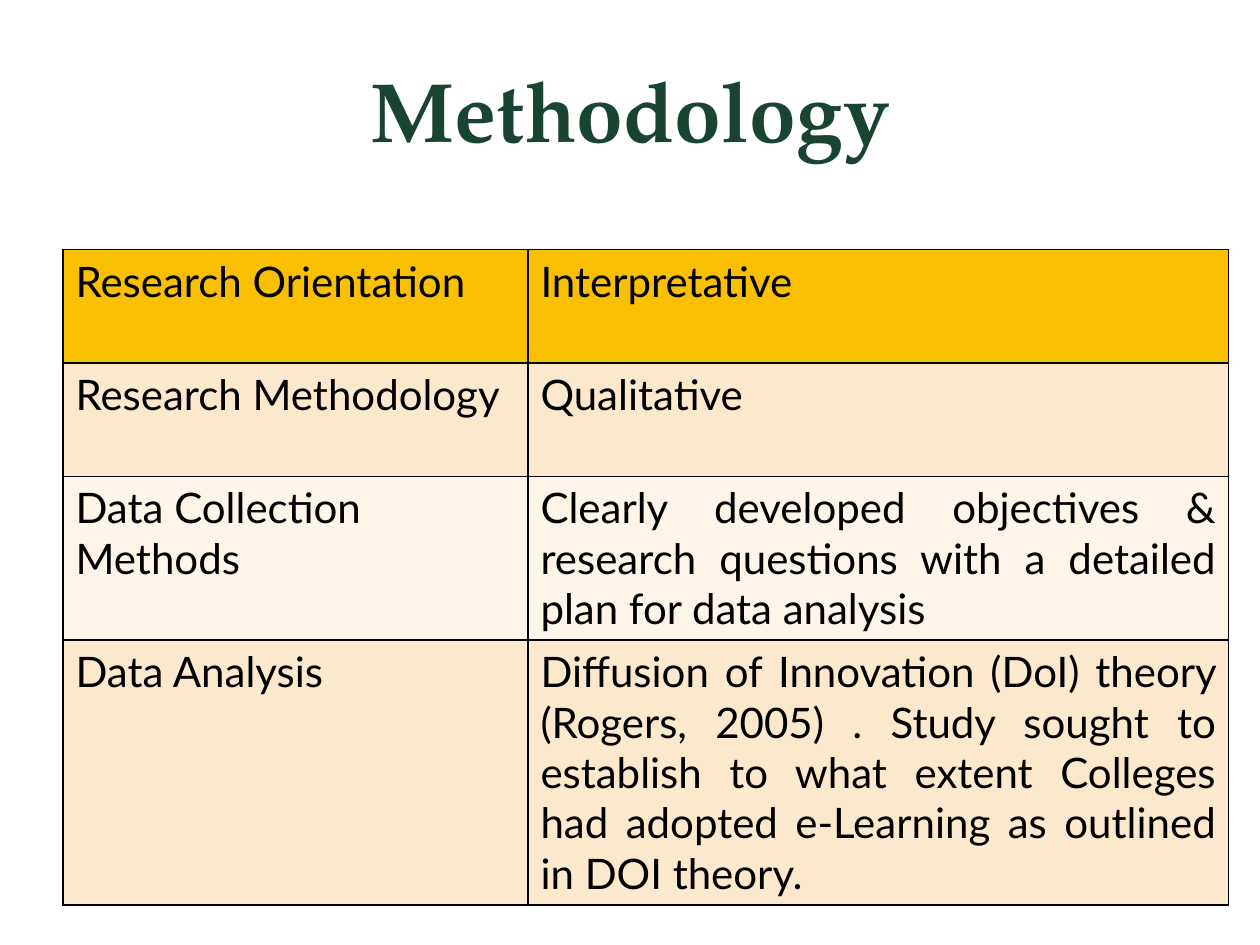
from lxml import etree
from pptx import Presentation
from pptx.dml.color import RGBColor
from pptx.enum.text import MSO_ANCHOR, PP_ALIGN
from pptx.oxml.ns import qn
from pptx.util import Inches, Pt

LEFT, CENTER, JUSTIFY = PP_ALIGN.LEFT, PP_ALIGN.CENTER, PP_ALIGN.JUSTIFY
MIDDLE = MSO_ANCHOR.MIDDLE
COLORS = {
    "title": "194431",
    "text": "000000",
    "border": "000000",
    "header": "F8C000",
    "band": "FCE8CC",
    "plain": "FEF4E7",
}
TITLE_FONT = {"name": "TeX Gyre Pagella", "size": Pt(48), "bold": True}
CELL_FONT = {"name": "Lato", "size": Pt(24), "bold": False}
COLUMN_WIDTHS = [3.69, 5.56]
METHOD_ROWS = [
    (0.9, "header", LEFT, "Research Orientation", "Interpretative"),
    (0.9, "band", JUSTIFY, "Research Methodology", "Qualitative"),
    (1.3, "plain", LEFT, "Data Collection Methods",
     "Clearly developed objectives & research questions with a detailed plan "
     "for data analysis"),
    (2.1, "band", LEFT, "Data Analysis",
     "Diffusion of Innovation (DoI) theory (Rogers, 2005) . Study sought to "
     "establish to what extent Colleges had adopted e-Learning as outlined in "
     "DOI theory."),
]


def write_text(frame, text, align, font, color):
    """Write one formatted paragraph into a text frame."""
    para = frame.paragraphs[0]
    para.alignment = align
    span = para.add_run()
    span.text = text
    for name, value in font.items():
        setattr(span.font, name, value)
    span.font.color.rgb = RGBColor.from_string(COLORS[color])


def add_borders(cell):
    """Draw a one-point line on each side of a cell."""
    properties = cell._tc.get_or_add_tcPr()
    for index, side in enumerate(("a:lnL", "a:lnR", "a:lnT", "a:lnB")):
        line = etree.Element(qn(side), w=str(Pt(1)))
        fill = etree.SubElement(line, qn("a:solidFill"))
        etree.SubElement(fill, qn("a:srgbClr"), val=COLORS["border"])
        properties.insert(index, line)


def fill_cell(cell, text, align, color):
    """Give a cell its fill, text and borders."""
    cell.fill.solid()
    cell.fill.fore_color.rgb = RGBColor.from_string(COLORS[color])
    write_text(cell.text_frame, text, align, CELL_FONT, "text")
    add_borders(cell)


def place_title(page, text, left, top, width, height):
    """Move the title placeholder into its box and format it."""
    title = page.shapes.title
    box = {"left": left, "top": top, "width": width, "height": height}
    for name, value in box.items():
        setattr(title, name, Inches(value))
    title.text_frame.vertical_anchor = MIDDLE
    write_text(title.text_frame, text, CENTER, TITLE_FONT, "title")


def add_method_table(page, left, top):
    """Add the methodology table with its top left corner at the given point."""
    width = sum(COLUMN_WIDTHS)
    height = sum(row[0] for row in METHOD_ROWS)
    table = page.shapes.add_table(
        len(METHOD_ROWS), len(COLUMN_WIDTHS),
        Inches(left), Inches(top), Inches(width), Inches(height)).table
    for column, column_width in zip(table.columns, COLUMN_WIDTHS):
        column.width = Inches(column_width)
    for row, (row_height, color, align, topic, detail) in zip(table.rows, METHOD_ROWS):
        row.height = Inches(row_height)
        fill_cell(row.cells[0], topic, align, color)
        fill_cell(row.cells[1], detail, JUSTIFY, color)


def main():
    """Build the methodology slide and save the deck."""
    deck = Presentation()
    deck.slide_width, deck.slide_height = Inches(10), Inches(7.5)
    page = deck.slides.add_slide(deck.slide_layouts[5])
    place_title(page, "Methodology", 0.84, 0.09, 8.32, 1.55)
    add_method_table(page, 0.5, 1.98)
    deck.save("out.pptx")


if __name__ == "__main__":
    main()
